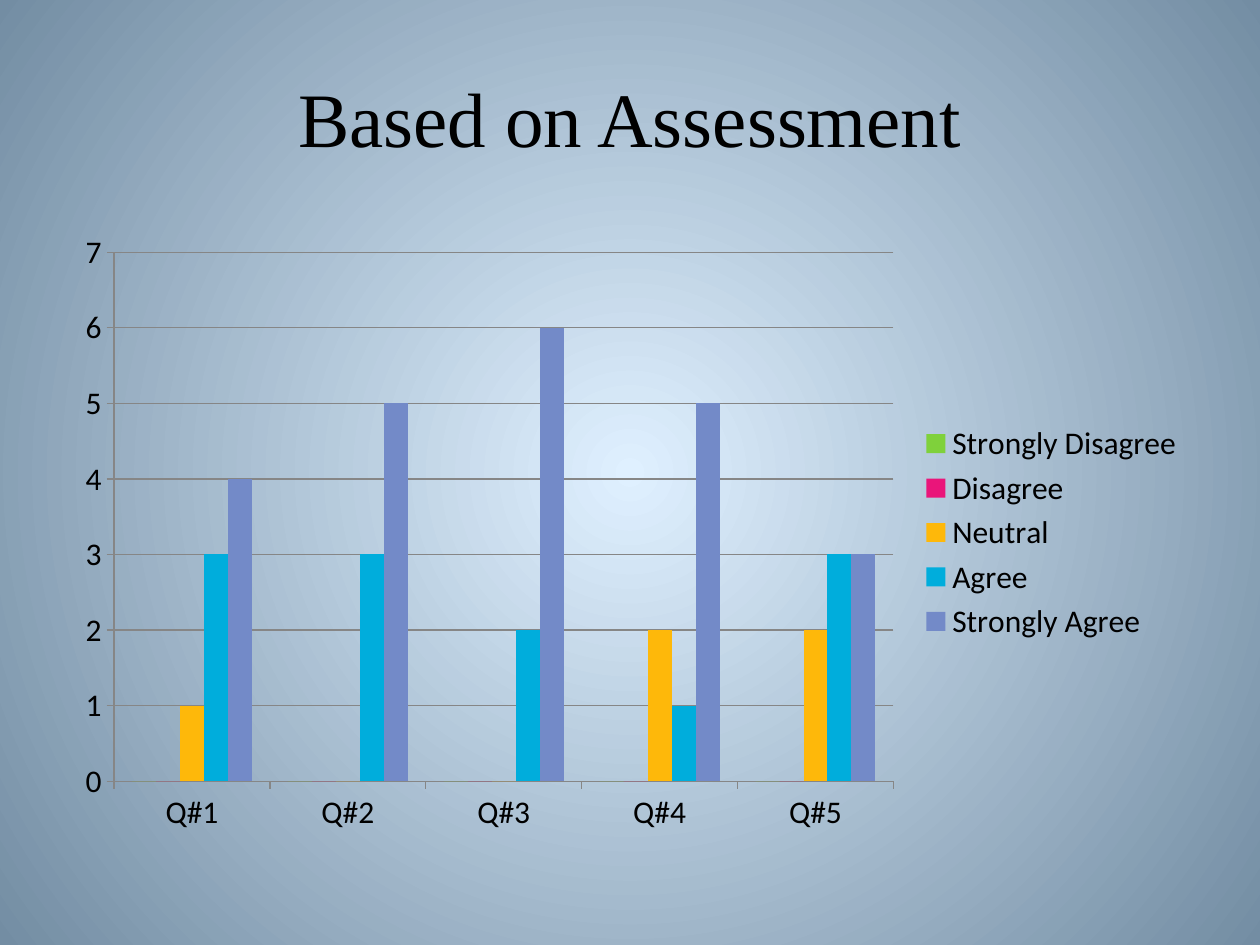
from lxml.etree import SubElement
from pptx import Presentation
from pptx.chart.data import CategoryChartData
from pptx.dml.color import RGBColor
from pptx.enum.chart import XL_CHART_TYPE as ChartType, XL_LEGEND_POSITION as LegendPosition
from pptx.enum.text import MSO_ANCHOR as Anchor, PP_ALIGN as Align
from pptx.oxml.ns import qn
from pptx.util import Cm, Pt

BLACK = "000000"
AXIS_GRAY = "868686"
QUESTIONS = [f"Q#{number}" for number in range(1, 6)]
ANSWERS = [
    ("Strongly Disagree", (0, 0, 0, 0, 0), "7FD13B"),
    ("Disagree", (0, 0, 0, 0, 0), "EA157A"),
    ("Neutral", (1, 0, 0, 2, 2), "FEB80A"),
    ("Agree", (3, 3, 2, 1, 3), "00ADDC"),
    ("Strongly Agree", (4, 5, 6, 5, 3), "738AC8"),
]


def color(value):
    return RGBColor.from_string(value)


def set_font(font, name, size):
    font.name, font.size = name, Pt(size)
    font.color.rgb = color(BLACK)


def style_line(line):
    line.color.rgb = color(AXIS_GRAY)
    line.width = Pt(0.75)


def set_radial_background(page, center, edge):
    fill = page.background.fill
    fill.gradient()
    for stop, position, value in zip(fill.gradient_stops, (0, 1), (center, edge)):
        stop.position = position
        stop.color.rgb = color(value)
    # Swap the linear direction for a circle around the middle
    gradient = page.element.find(".//" + qn("a:gradFill"))
    gradient.remove(gradient.find(qn("a:lin")))
    circle = SubElement(gradient, qn("a:path"), {"path": "circle"})
    SubElement(circle, qn("a:fillToRect"), dict.fromkeys("ltrb", "50000"))


def add_title(page, text, left, top, width, height):
    box = page.shapes.add_textbox(left, top, width, height)
    frame = box.text_frame
    frame.word_wrap = True
    frame.vertical_anchor = Anchor.MIDDLE
    para = frame.paragraphs[0]
    para.text = text
    para.alignment = Align.CENTER
    set_font(para.font, "Times New Roman", 44)


def add_answer_chart(page, left, top, width, height):
    data = CategoryChartData()
    data.categories = QUESTIONS
    for name, values, _ in ANSWERS:
        data.add_series(name, values)
    chart = page.shapes.add_chart(
        ChartType.COLUMN_CLUSTERED, left, top, width, height, data).chart
    set_font(chart.font, "Calibri", 18)
    chart.has_title = False

    # Columns
    plot = chart.plots[0]
    plot.gap_width = 150
    plot.vary_by_categories = False
    for series, (_, _, value) in zip(plot.series, ANSWERS):
        series.format.fill.solid()
        series.format.fill.fore_color.rgb = color(value)

    # Axes and gridlines
    for axis in (chart.category_axis, chart.value_axis):
        style_line(axis.format.line)
    chart.value_axis.has_major_gridlines = True
    style_line(chart.value_axis.major_gridlines.format.line)

    # Legend
    chart.has_legend = True
    chart.legend.position = LegendPosition.RIGHT
    chart.legend.include_in_layout = False


def main():
    deck = Presentation()
    deck.slide_width, deck.slide_height = Cm(25.4), Cm(19.05)
    page = deck.slides.add_slide(deck.slide_layouts[6])
    set_radial_background(page, "DFF0FF", "738DA3")
    add_title(page, "Based on Assessment", Cm(1.27), Cm(0.76), Cm(22.86), Cm(3.18))
    add_answer_chart(page, Cm(1.27), Cm(4.45), Cm(22.86), Cm(12.57))
    deck.save("out.pptx")


if __name__ == "__main__":
    main()
